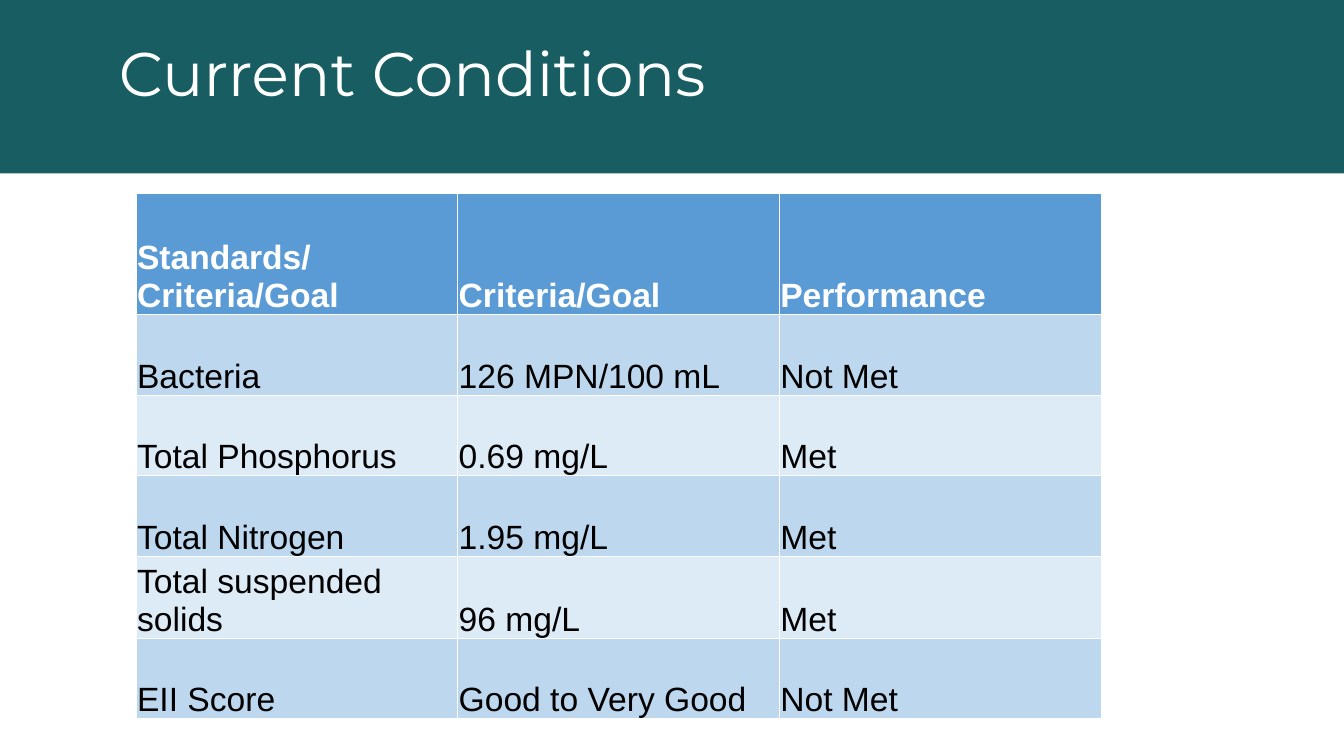
from lxml.etree import SubElement
from pptx import Presentation
from pptx.dml.color import RGBColor
from pptx.enum.shapes import MSO_SHAPE
from pptx.enum.text import MSO_ANCHOR
from pptx.oxml.ns import qn
from pptx.util import Emu, Pt

PX_PER_INCH = 100
WHITE, BLACK, TEAL = "FFFFFF", "000000", "185D62"
HEADER_BLUE, BAND_BLUES = "5B9BD5", ("BDD7EE", "DDEBF7")
COLUMN_WIDTH, HEADER_HEIGHT, ROW_HEIGHT = 319, 120, 80
CONDITIONS = [
    ("Standards/Criteria/Goal", "Criteria/Goal", "Performance"),
    ("Bacteria", "126 MPN/100 mL", "Not Met"),
    ("Total Phosphorus", "0.69 mg/L", "Met"),
    ("Total Nitrogen", "1.95 mg/L", "Met"),
    ("Total suspended solids", "96 mg/L", "Met"),
    ("EII Score", "Good to Very Good", "Not Met"),
]


def px(length):
    return Emu(length * 914400 // PX_PER_INCH)


def color(value):
    return RGBColor.from_string(value)


def paint(target, value):
    target.fill.solid()
    target.fill.fore_color.rgb = color(value)


def style_font(font, name, size, value, bold=False):
    font.name, font.size, font.bold = name, Pt(size), bold
    font.color.rgb = color(value)


def add_banner(page, width, height):
    banner = page.shapes.add_shape(MSO_SHAPE.RECTANGLE, 0, 0, px(width), px(height))
    banner.shadow.inherit = False
    paint(banner, TEAL)
    banner.line.fill.background()


def add_title(page, text, left, top, width, height):
    box = page.shapes.add_textbox(px(left), px(top), px(width), px(height))
    frame = box.text_frame
    frame.word_wrap = True
    frame.vertical_anchor = MSO_ANCHOR.BOTTOM
    frame.margin_left = frame.margin_right = px(10)
    frame.margin_top = frame.margin_bottom = px(10)
    para = frame.paragraphs[0]
    para.text = text
    para.line_spacing = 0.9
    style_font(para.font, "Montserrat", 44, WHITE)


def add_borders(cell, value, width):
    properties = cell._tc.get_or_add_tcPr()
    for side in ("lnL", "lnR", "lnT", "lnB"):
        line = SubElement(properties, qn(f"a:{side}"), w=str(Pt(width)))
        fill = SubElement(line, qn("a:solidFill"))
        SubElement(fill, qn("a:srgbClr"), val=value)


def fill_cell(cell, text, background, foreground, bold):
    add_borders(cell, WHITE, 0.5)
    paint(cell, background)
    cell.vertical_anchor = MSO_ANCHOR.BOTTOM
    cell.margin_left = cell.margin_right = cell.margin_top = px(1)
    cell.margin_bottom = 0
    para = cell.text_frame.paragraphs[0]
    para.text = text
    style_font(para.font, "Arial", 24, foreground, bold)


def add_conditions_table(page, left, top):
    row_count, column_count = len(CONDITIONS), len(CONDITIONS[0])
    width = column_count * COLUMN_WIDTH
    height = HEADER_HEIGHT + (row_count - 1) * ROW_HEIGHT
    table = page.shapes.add_table(
        row_count, column_count, px(left), px(top), px(width), px(height)
    ).table
    for column in table.columns:
        column.width = px(COLUMN_WIDTH)
    for index, texts in enumerate(CONDITIONS):
        header = index == 0
        table.rows[index].height = px(HEADER_HEIGHT if header else ROW_HEIGHT)
        background = HEADER_BLUE if header else BAND_BLUES[(index - 1) % 2]
        foreground = WHITE if header else BLACK
        for cell, text in zip(table.rows[index].cells, texts):
            fill_cell(cell, text, background, foreground, header)


def main():
    deck = Presentation()
    deck.slide_width, deck.slide_height = px(1333), px(750)
    page = deck.slides.add_slide(deck.slide_layouts[6])
    add_banner(page, 1333, 172)
    add_title(page, " Current Conditions", 92, 50, 1241, 69)
    add_conditions_table(page, 135, 192)
    deck.save("out.pptx")


if __name__ == "__main__":
    main()
